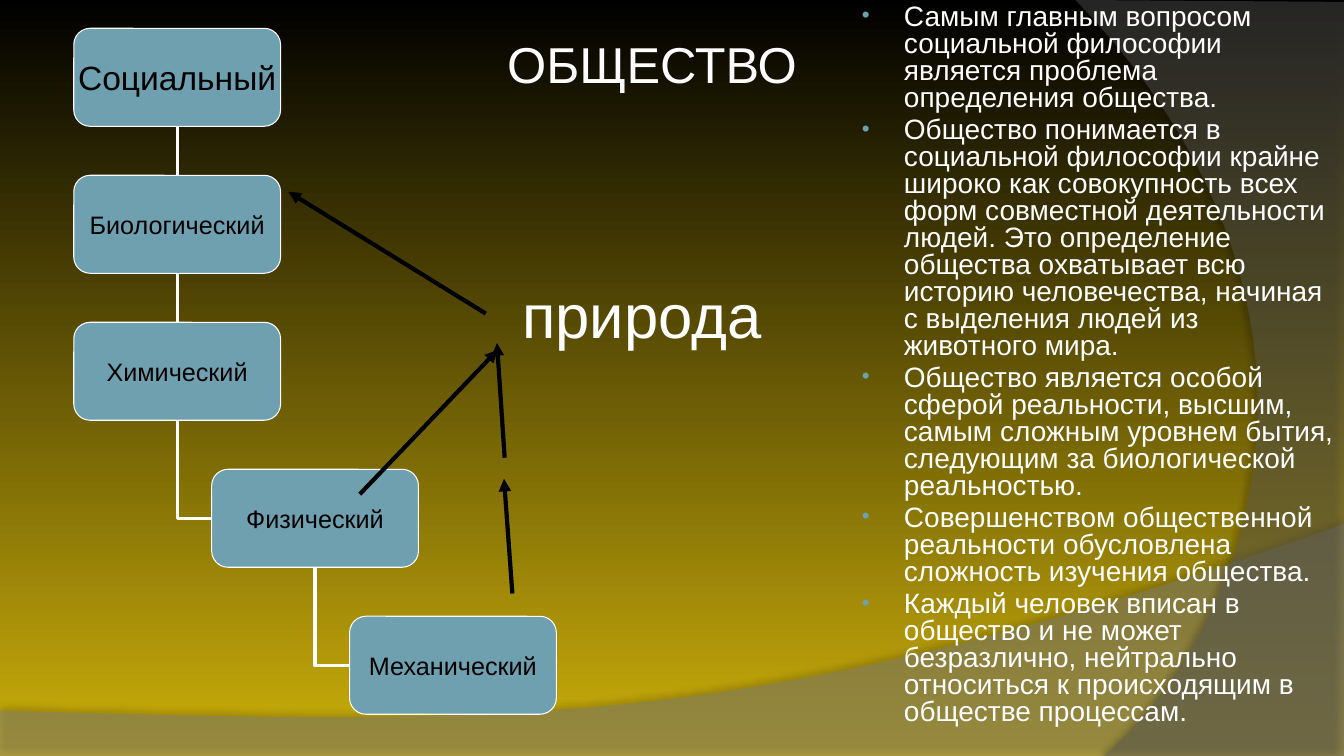
"""Build the slide on society, nature and the levels of reality."""
from lxml.etree import SubElement
from pptx import Presentation
from pptx.dml.color import RGBColor
from pptx.enum.shapes import MSO_CONNECTOR as Link, MSO_SHAPE as Preset
from pptx.enum.text import MSO_ANCHOR as Anchor, MSO_AUTO_SIZE as AutoSize, PP_ALIGN as Align
from pptx.oxml.ns import qn
from pptx.util import Pt

COLORS = {
    "black": "000000", "gold": "CCAF0A", "white": "FFFFFF",
    "blue": "6EA0B0", "wave": "7F7F7F", "arc": "5E5E5E",
}


def style_font(paragraph, size, color):
    paragraph.font.name = "Arial"
    paragraph.font.size = Pt(size)
    paragraph.font.color.rgb = RGBColor.from_string(COLORS[color])


def style_line(connector, width, color):
    connector.line.width = Pt(width)
    connector.line.color.rgb = RGBColor.from_string(COLORS[color])
    SubElement(connector.element.spPr, qn("a:effectLst"))


deck = Presentation()
deck.slide_width, deck.slide_height = Pt(960), Pt(540)
page = deck.slides.add_slide(deck.slide_layouts[1])

backdrop = page.background.fill
backdrop.gradient()
backdrop.gradient_angle = 270
for stop, color, position in zip(backdrop.gradient_stops, ("black", "gold"), (0, 1)):
    stop.color.rgb = RGBColor.from_string(COLORS[color])
    stop.position = position

# color, opacity %, shadow (opacity %, distance, direction), corners, curve
swooshes = [
    ("wave", 45, (35, 3.5, 270), [(0, 507.6), (0, 540), (960, 540)],
     [(960, 374.4), (536.4, 524.9), (375.1, 517.7), (0, 507.6)]),
    ("arc", 40, (45, 4, 180), [(960, 1.4), (960, 540)],
     [(788.4, 540), (897.1, 445.7), (977, 216), (768.2, 0)]),
]
for layer, (color, opacity, shadow, corners, curve) in enumerate(swooshes):
    outline = list(corners)
    for step in range(41):
        t = step / 40
        weights = ((1 - t) ** 3, 3 * t * (1 - t) ** 2, 3 * t * t * (1 - t), t ** 3)
        outline.append(tuple(sum(w * point[axis] for w, point in zip(weights, curve))
                             for axis in (0, 1)))
    points = [(Pt(x), Pt(y)) for x, y in outline]
    builder = page.shapes.build_freeform(*points[0])
    builder.add_line_segments(points[1:], close=True)
    swoosh = builder.convert_to_shape()
    swoosh.line.fill.background()
    swoosh.fill.solid()
    swoosh.fill.fore_color.rgb = RGBColor.from_string(COLORS[color])
    fill_color = swoosh.element.spPr.find(qn("a:solidFill"))[0]
    SubElement(fill_color, qn("a:alpha"), val=str(opacity * 1000))
    strength, distance, direction = shadow
    effects = SubElement(swoosh.element.spPr, qn("a:effectLst"))
    outer = SubElement(effects, qn("a:outerShdw"), blurRad=str(Pt(4)),
                       dist=str(Pt(distance)), dir=str(direction * 60000), rotWithShape="0")
    shade = SubElement(outer, qn("a:srgbClr"), val=COLORS["black"])
    SubElement(shade, qn("a:alpha"), val=str(strength * 1000))
    swoosh.element.getparent().insert(2 + layer, swoosh.element)

theses = [
    "Самым главным вопросом социальной философии является проблема определения общества.",
    "Общество понимается в социальной философии крайне широко как совокупность всех форм "
    "совместной деятельности людей. Это определение общества охватывает всю историю "
    "человечества, начиная с выделения людей из животного мира.",
    "Общество является особой сферой реальности, высшим, самым сложным уровнем бытия, "
    "следующим за биологической реальностью.",
    "Совершенством общественной реальности обусловлена сложность изучения общества.",
    "Каждый человек вписан в общество и не может безразлично, нейтрально относиться к "
    "происходящим в обществе процессам.",
]
body = page.placeholders[1]
body.left, body.top, body.width, body.height = Pt(605.5), Pt(0), Pt(354.5), Pt(540)
body.text_frame.text = "\n".join(theses)
body.text_frame.auto_size = AutoSize.NONE
for para in body.text_frame.paragraphs:
    style_font(para, 20, "white")
    para.line_spacing = 0.8
    para.space_before = Pt(4)
    properties = para._p.get_or_add_pPr()
    properties.set("marL", str(Pt(33)))
    properties.set("indent", str(Pt(-30)))
    bullet_color = SubElement(properties, qn("a:buClr"))
    SubElement(bullet_color, qn("a:srgbClr"), val=COLORS["blue"])
    SubElement(properties, qn("a:buSzPct"), val="80000")
    SubElement(properties, qn("a:buFont"), typeface="Arial")
    SubElement(properties, qn("a:buChar"), char="•")
    properties.append(properties.find(qn("a:defRPr")))

title = page.shapes.title
title.left, title.top, title.width, title.height = Pt(355), Pt(20), Pt(224), Pt(51)
nature = page.shapes.add_textbox(Pt(366), Pt(194.5), Pt(186.5), Pt(60))
for box, words, size in ((title, "ОБЩЕСТВО", 36), (nature, "природа", 44)):
    box.text_frame.text = words
    box.text_frame.word_wrap = False
    box.text_frame.auto_size = AutoSize.NONE
    box.text_frame.paragraphs[0].alignment = Align.LEFT
    style_font(box.text_frame.paragraphs[0], size, "white")

levels = [
    ("Социальный", 24, 0), ("Биологический", 18, 0), ("Химический", 18, 0),
    ("Физический", 18, 1), ("Механический", 18, 2),
]
above, above_depth = None, 0
for row, (level, size, depth) in enumerate(levels):
    box = page.shapes.add_shape(Preset.ROUNDED_RECTANGLE, Pt(52.7 + 98.5 * depth),
                                Pt(20.2 + 105 * row), Pt(147.7), Pt(70))
    box.shadow.inherit = False
    box.fill.solid()
    box.fill.fore_color.rgb = RGBColor.from_string(COLORS["blue"])
    box.line.color.rgb = RGBColor.from_string(COLORS["white"])
    box.line.width = Pt(0.75)
    frame = box.text_frame
    frame.margin_left = frame.margin_top = frame.margin_right = frame.margin_bottom = 0
    frame.word_wrap = False
    frame.vertical_anchor = Anchor.MIDDLE
    frame.text = level
    frame.paragraphs[0].alignment = Align.CENTER
    style_font(frame.paragraphs[0], size, "black")
    if above is not None:
        bent = depth > above_depth
        branch = page.shapes.add_connector(Link.ELBOW if bent else Link.STRAIGHT, 0, 0, 0, 0)
        branch.begin_connect(box, 1 if bent else 0)
        branch.end_connect(above, 2)
        if bent:
            branch.element.spPr.find(qn("a:prstGeom")).set("prst", "bentConnector2")
        style_line(branch, 2.25, "white")
    above, above_depth = box, depth

arrows = [
    (257, 353, 355.5, 250), (347, 224, 206, 137),
    (360.5, 327, 355, 245), (366, 424, 360, 342),
]
for ends in arrows:
    arrow = page.shapes.add_connector(Link.STRAIGHT, *(Pt(end) for end in ends))
    style_line(arrow, 3, "black")
    SubElement(arrow.line._get_or_add_ln(), qn("a:tailEnd"), type="triangle")

deck.save("out.pptx")
